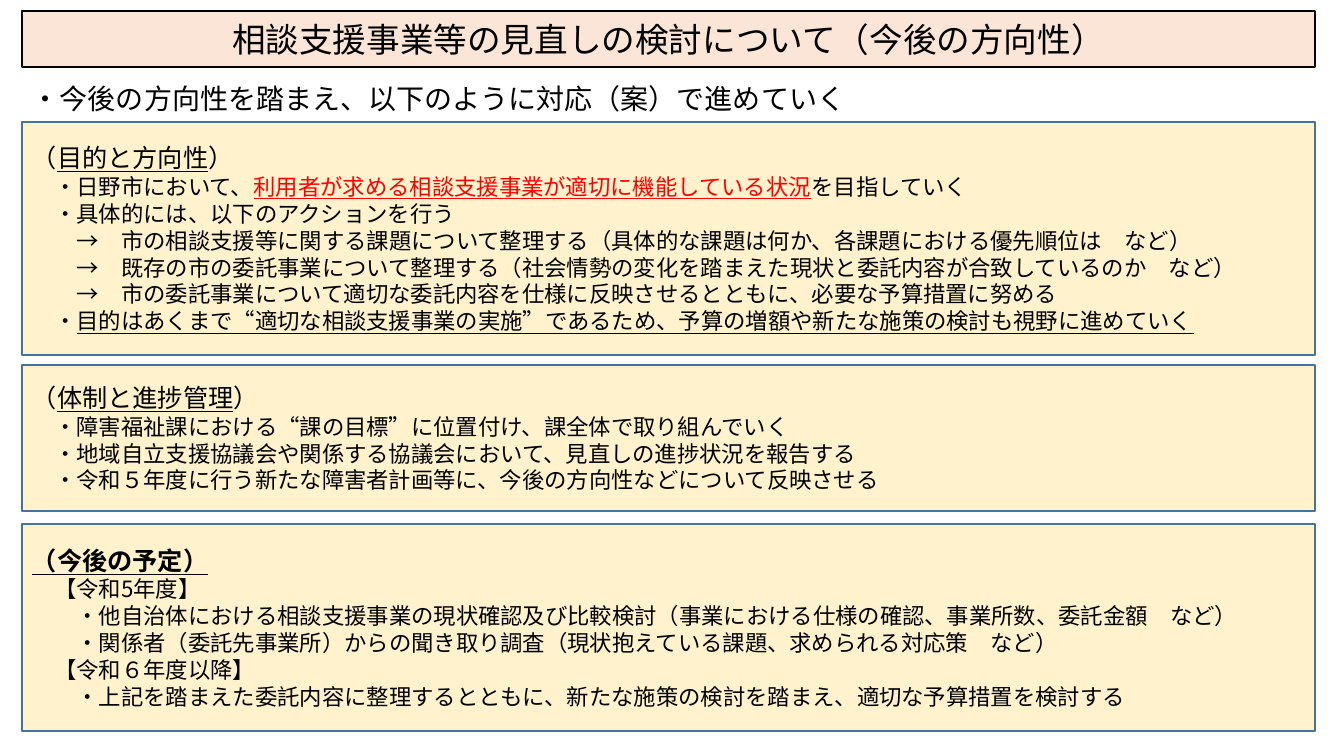
from dataclasses import dataclass

import pptx
import pptx.dml.color
import pptx.enum.shapes
import pptx.enum.text
import pptx.oxml.ns
import pptx.util
from lxml import etree

EMU_PER_PX = 914400 / 100.8
FONT_NAME = "Noto Sans CJK JP"
LEFT, WIDTH = 22, 1293
BLACK, RED = "000000", "FF0000"
CREAM, PEACH, BLUE = "FFF2CC", "FBE5D6", "43739E"
HEADING_SIZE, BODY_SIZE = 18, 16
LINE_PITCH = 1.2


@dataclass
class Span:
    text: str
    color: str = BLACK
    underline: bool = False
    bold: bool = False


@dataclass
class Line:
    spans: list[Span]
    level: int = 0
    size: int = BODY_SIZE
    centered: bool = False


@dataclass
class Panel:
    top: int
    height: int
    lines: list[Line]
    fill: str = CREAM
    outline: str = BLUE


def px(length: float) -> int:
    return round(length * EMU_PER_PX)


def rgb(color: str) -> pptx.dml.color.RGBColor:
    return pptx.dml.color.RGBColor.from_string(color)


def heading(text: str) -> Line:
    return Line([Span("（"), Span(text, underline=True), Span("）")], size=HEADING_SIZE)


def body(text: str, level: int = 1) -> Line:
    return Line([Span(text)], level)


def format_run(run, span: Span, size: int) -> None:
    font = run.font
    font.name = FONT_NAME
    font.size = pptx.util.Pt(size)
    font.bold = span.bold
    font.underline = span.underline
    font.color.rgb = rgb(span.color)
    east_asian = etree.Element(pptx.oxml.ns.qn("a:ea"), typeface=FONT_NAME)
    font._element.find(pptx.oxml.ns.qn("a:latin")).addnext(east_asian)


def write_lines(text_frame, lines: list[Line]) -> None:
    text_frame.word_wrap = True
    text_frame.vertical_anchor = pptx.enum.text.MSO_ANCHOR.MIDDLE
    text_frame.text = "\n".join(line.spans[0].text for line in lines)
    alignment = pptx.enum.text.PP_ALIGN
    for paragraph, line in zip(text_frame.paragraphs, lines):
        paragraph.alignment = alignment.CENTER if line.centered else alignment.LEFT
        paragraph.line_spacing = pptx.util.Pt(line.size * LINE_PITCH)
        if line.level:
            indent = pptx.util.Pt(line.level * BODY_SIZE)
            paragraph._p.get_or_add_pPr().set("marL", str(indent))
        for span in line.spans[1:]:
            paragraph.add_run().text = span.text
        for run, span in zip(paragraph.runs, line.spans):
            format_run(run, span, line.size)


def draw_panel(slide, panel: Panel) -> None:
    shape = slide.shapes.add_shape(
        pptx.enum.shapes.MSO_SHAPE.RECTANGLE,
        px(LEFT), px(panel.top), px(WIDTH), px(panel.height),
    )
    shape.shadow.inherit = False
    shape.fill.solid()
    shape.fill.fore_color.rgb = rgb(panel.fill)
    shape.line.color.rgb = rgb(panel.outline)
    shape.line.width = pptx.util.Pt(1)
    write_lines(shape.text_frame, panel.lines)


def draw_lead(slide, top: int, height: int, line: Line) -> None:
    text_box = slide.shapes.add_textbox(px(LEFT), px(top), px(WIDTH), px(height))
    write_lines(text_box.text_frame, [line])


TITLE = Panel(
    11, 56,
    [Line([Span("相談支援事業等の見直しの検討について（今後の方向性）")], size=24, centered=True)],
    PEACH, BLACK,
)
LEAD = Line([Span("・今後の方向性を踏まえ、以下のように対応（案）で進めていく")], size=20)
PURPOSE = Panel(122, 233, [
    heading("目的と方向性"),
    Line([
        Span("・日野市において、"),
        Span("利用者が求める相談支援事業が適切に機能している状況", RED, underline=True),
        Span("を目指していく"),
    ], 1),
    body("・具体的には、以下のアクションを行う"),
    body("→　市の相談支援等に関する課題について整理する（具体的な課題は何か、各課題における優先順位は　など）", 2),
    body("→　既存の市の委託事業について整理する（社会情勢の変化を踏まえた現状と委託内容が合致しているのか　など）", 2),
    body("→　市の委託事業について適切な委託内容を仕様に反映させるとともに、必要な予算措置に努める", 2),
    Line([
        Span("・"),
        Span("目的はあくまで“適切な相談支援事業の実施”であるため、予算の増額や新たな施策の検討も視野に進めていく", underline=True),
    ], 1),
])
MANAGEMENT = Panel(365, 146, [
    heading("体制と進捗管理"),
    body("・障害福祉課における“課の目標”に位置付け、課全体で取り組んでいく"),
    body("・地域自立支援協議会や関係する協議会において、見直しの進捗状況を報告する"),
    body("・令和５年度に行う新たな障害者計画等に、今後の方向性などについて反映させる"),
])
SCHEDULE = Panel(524, 207, [
    Line([Span("（今後の予定）", underline=True, bold=True)], size=HEADING_SIZE),
    body("【令和5年度】"),
    body("・他自治体における相談支援事業の現状確認及び比較検討（事業における仕様の確認、事業所数、委託金額　など）", 2),
    body("・関係者（委託先事業所）からの聞き取り調査（現状抱えている課題、求められる対応策　など）", 2),
    body("【令和６年度以降】"),
    body("・上記を踏まえた委託内容に整理するとともに、新たな施策の検討を踏まえ、適切な予算措置を検討する", 2),
])


def main() -> None:
    presentation = pptx.Presentation()
    presentation.slide_width = px(1344)
    presentation.slide_height = px(756)
    slide = presentation.slides.add_slide(presentation.slide_layouts[6])
    draw_panel(slide, TITLE)
    draw_lead(slide, 70, 56, LEAD)
    for panel in (PURPOSE, MANAGEMENT, SCHEDULE):
        draw_panel(slide, panel)
    presentation.save("out.pptx")


if __name__ == "__main__":
    main()
